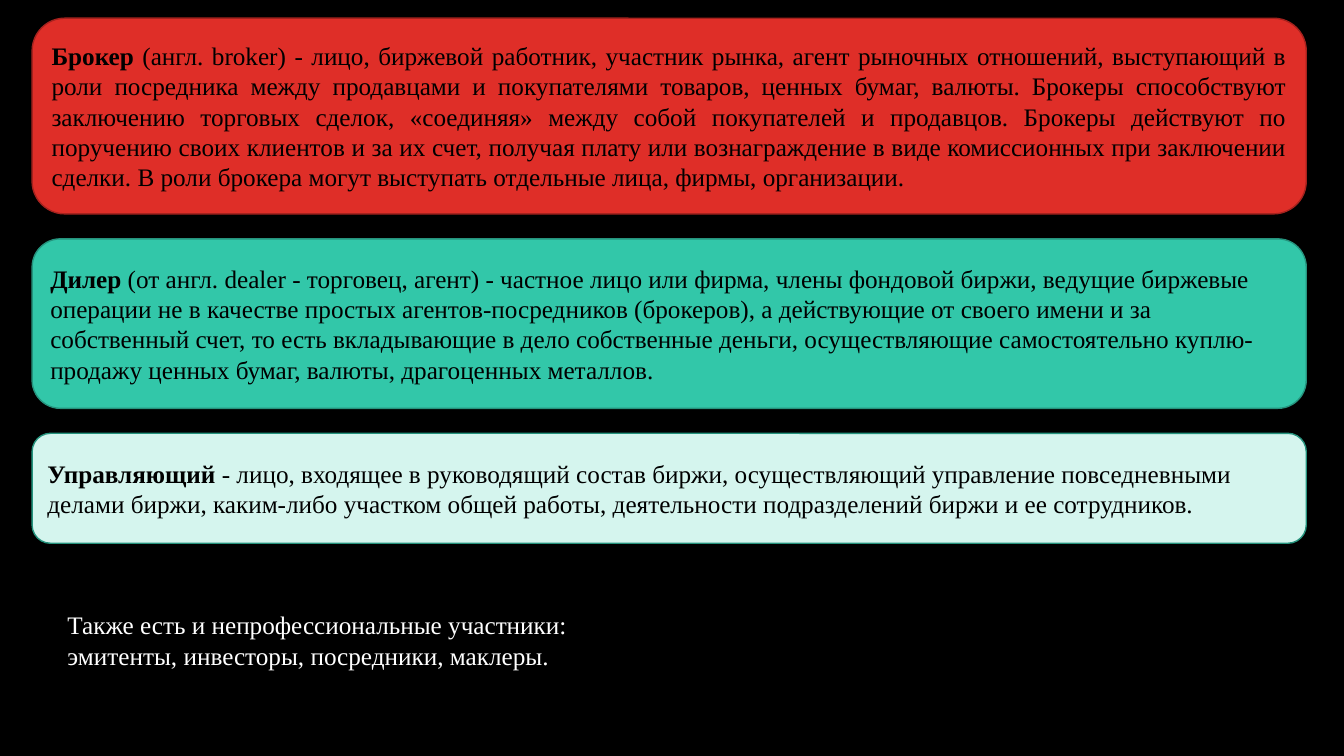
from pptx import Presentation
from pptx.dml.color import RGBColor as Rgb
from pptx.enum.shapes import MSO_SHAPE as Form
from pptx.enum.text import MSO_ANCHOR as Anchor, MSO_AUTO_SIZE as Auto, PP_ALIGN as Align
from pptx.util import Cm, Pt

hues = {
    "back": "000000",
    "ink": "000000",
    "light": "FFFFFF",
    "red": "DF2E28",
    "wine": "A5221E",
    "teal": "32C7A9",
    "pine": "25937D",
    "mint": "D5F5EE",
}


def hue(name):
    return Rgb.from_string(hues[name])


def style(para, name):
    para.font.name = "Times New Roman"
    para.font.size = Pt(18)
    para.font.color.rgb = hue(name)


deck = Presentation()
deck.slide_width = Cm(33.87)
deck.slide_height = Cm(19.05)
slide = deck.slides.add_slide(deck.slide_layouts[6])
slide.background.fill.solid()
slide.background.fill.fore_color.rgb = hue("back")

roles = [
    ("Брокер", " (англ. broker) - лицо, биржевой работник, участник рынка, агент рыночных "
     "отношений, выступающий в роли посредника между продавцами и покупателями товаров, "
     "ценных бумаг, валюты. Брокеры способствуют заключению торговых сделок, «соединяя» "
     "между собой покупателей и продавцов. Брокеры действуют по поручению своих клиентов "
     "и за их счет, получая плату или вознаграждение в виде комиссионных при заключении "
     "сделки. В роли брокера могут выступать отдельные лица, фирмы, организации.",
     4.93, "red", "wine", Align.JUSTIFY),
    ("Дилер", " (от англ. dealer - торговец, агент) - частное лицо или фирма, члены фондовой "
     "биржи, ведущие биржевые операции не в качестве простых агентов-посредников (брокеров), "
     "а действующие от своего имени и за собственный счет, то есть вкладывающие в дело "
     "собственные деньги, осуществляющие самостоятельно куплю-продажу ценных бумаг, валюты, "
     "драгоценных металлов.",
     4.27, "teal", "pine", Align.LEFT),
    ("Управляющий", " - лицо, входящее в руководящий состав биржи, осуществляющий управление "
     "повседневными делами биржи, каким-либо участком общей работы, деятельности "
     "подразделений биржи и ее сотрудников.",
     2.77, "mint", "pine", Align.LEFT),
]

top = 0.46
gap = 0.63
for term, text, high, fill, edge, align in roles:
    card = slide.shapes.add_shape(Form.ROUNDED_RECTANGLE, Cm(0.81), Cm(top), Cm(32.11), Cm(high))
    card.shadow.inherit = False
    card.fill.solid()
    card.fill.fore_color.rgb = hue(fill)
    card.line.color.rgb = hue(edge)
    card.line.width = Pt(1)
    frame = card.text_frame
    frame.word_wrap = True
    frame.vertical_anchor = Anchor.MIDDLE
    para = frame.paragraphs[0]
    para.alignment = align
    style(para, "ink")
    head = para.add_run()
    head.text = term
    head.font.bold = True
    para.add_run().text = text
    top += high + gap

note = slide.shapes.add_textbox(Cm(1.45), Cm(15.24), Cm(16.94), Cm(1.8))
frame = note.text_frame
frame.word_wrap = True
frame.auto_size = Auto.SHAPE_TO_FIT_TEXT
frame.text = "Также есть и непрофессиональные участники:\nэмитенты, инвесторы, посредники, маклеры."
for para in frame.paragraphs:
    style(para, "light")

deck.save("out.pptx")
